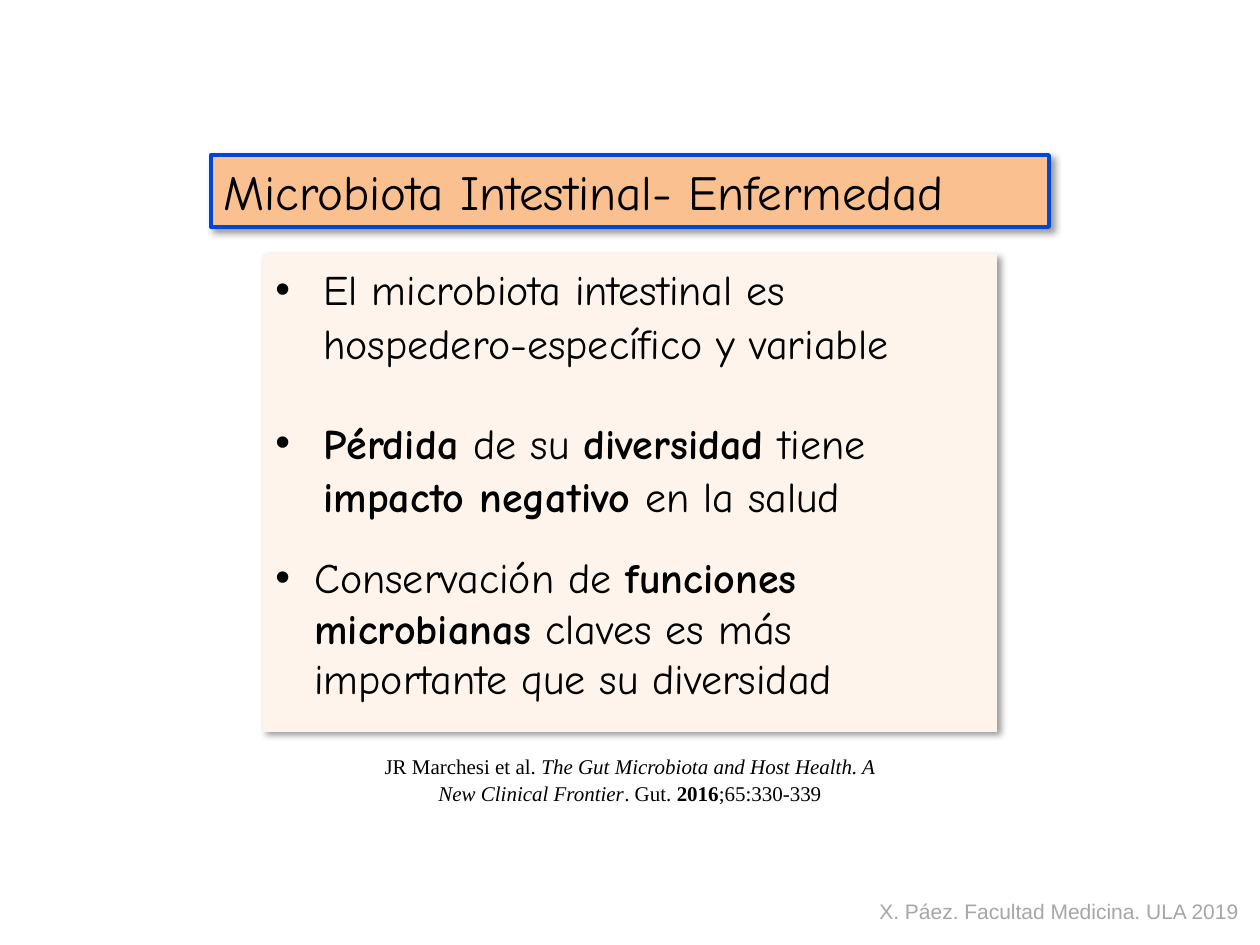
from lxml.etree import SubElement
from pptx import Presentation
from pptx.dml.color import RGBColor
from pptx.enum.shapes import MSO_SHAPE
from pptx.enum.text import MSO_ANCHOR, PP_ALIGN
from pptx.oxml.ns import qn
from pptx.util import Emu, Pt

PX_PER_INCH = 126
COLORS = {
    "ink": "000000",
    "title_fill": "FAC090",
    "title_line": "0047D6",
    "panel": "FEF4EC",
    "credit": "A6A6A6",
}
TITLE = {"name": "Comic Neue", "size": Pt(28)}
BODY = {"name": "Comic Neue", "size": Pt(24)}
CITATION = {"name": "Times New Roman", "size": Pt(12)}
CREDIT = {"name": "Arial", "size": Pt(12)}
BOLD = {"bold": True}
ITALIC = {"italic": True}

# Each point: indent in px, paragraph spacing, runs of (text, emphasis)
POINTS = [
    (48, {"line_spacing": 1.07, "space_after": Pt(26)},
     [("El microbiota intestinal es hospedero-específico y variable", {})]),
    (48, {"line_spacing": 1.07, "space_after": Pt(17.5)},
     [("Pérdida ", BOLD), ("de su ", {}), ("diversidad ", BOLD),
      ("tiene ", {}), ("impacto negativo ", BOLD), ("en la salud", {})]),
    (39, {},
     [("Conservación de ", {}), ("funciones microbianas", BOLD),
      (" claves es más importante que su diversidad", {})]),
]
REFERENCE = [
    ("JR Marchesi et al. ", {}),
    ("The Gut Microbiota and Host Health. A New Clinical Frontier", ITALIC),
    (". Gut.\u00a0", {}), ("2016", BOLD), (";65:330-339", {}),
]


def px(value):
    return Emu(round(value * 914400 / PX_PER_INCH))


def rgb(key):
    return RGBColor.from_string(COLORS[key])


def set_all(target, values):
    for name, value in values.items():
        setattr(target, name, value)


def add_shadow(shape):
    effects = SubElement(shape._element.spPr, qn("a:effectLst"))
    shadow = SubElement(effects, qn("a:outerShdw"), blurRad=str(Pt(4)),
                        dist=str(Pt(3)), dir=str(45 * 60000),
                        algn="tl", rotWithShape="0")
    color = SubElement(shadow, qn("a:srgbClr"), val=COLORS["ink"])
    SubElement(color, qn("a:alpha"), val="40000")


def add_panel(slide, box, fill, line=None):
    panel = slide.shapes.add_shape(MSO_SHAPE.RECTANGLE, *map(px, box))
    panel.fill.solid()
    panel.fill.fore_color.rgb = rgb(fill)
    if line:
        panel.line.color.rgb = rgb(line)
        panel.line.width = Pt(2.25)
    else:
        panel.line.fill.background()
    add_shadow(panel)
    set_all(panel.text_frame,
            {"word_wrap": True, "vertical_anchor": MSO_ANCHOR.TOP})
    return panel.text_frame


def add_label(slide, box, wrap):
    frame = slide.shapes.add_textbox(*map(px, box)).text_frame
    frame.word_wrap = wrap
    return frame


def write(paragraph, runs, style, color="ink", align=PP_ALIGN.LEFT):
    paragraph.alignment = align
    for text, emphasis in runs:
        run = paragraph.add_run()
        run.text = text
        set_all(run.font, {**style, **emphasis})
        run.font.color.rgb = rgb(color)


def add_bullet(paragraph, indent):
    properties = paragraph._p.get_or_add_pPr()
    properties.set("marL", str(px(indent)))
    properties.set("indent", str(-px(indent)))
    SubElement(properties, qn("a:buFont"), typeface="Arial")
    SubElement(properties, qn("a:buChar"), char="•")


def main():
    presentation = Presentation()
    set_all(presentation, {"slide_width": px(1260), "slide_height": px(945)})
    slide = presentation.slides.add_slide(presentation.slide_layouts[6])

    # Title
    title = add_panel(slide, (211, 155, 838, 72), "title_fill", "title_line")
    write(title.paragraphs[0], [("Microbiota Intestinal- Enfermedad", {})], TITLE)

    # Key points
    points = add_panel(slide, (263, 254, 734, 478), "panel")
    for number, (indent, spacing, runs) in enumerate(POINTS):
        point = points.add_paragraph() if number else points.paragraphs[0]
        add_bullet(point, indent)
        set_all(point, spacing)
        write(point, runs, BODY)

    # Reference
    reference = add_label(slide, (352, 746, 556, 67), True).paragraphs[0]
    reference.line_spacing = 1.07
    write(reference, REFERENCE, CITATION, align=PP_ALIGN.CENTER)

    # Author credit
    credit = add_label(slide, (867, 892, 388, 38), False).paragraphs[0]
    write(credit, [("X. Páez. Facultad Medicina. ULA 2019", {})], CREDIT, "credit")

    presentation.save("out.pptx")


if __name__ == "__main__":
    main()
